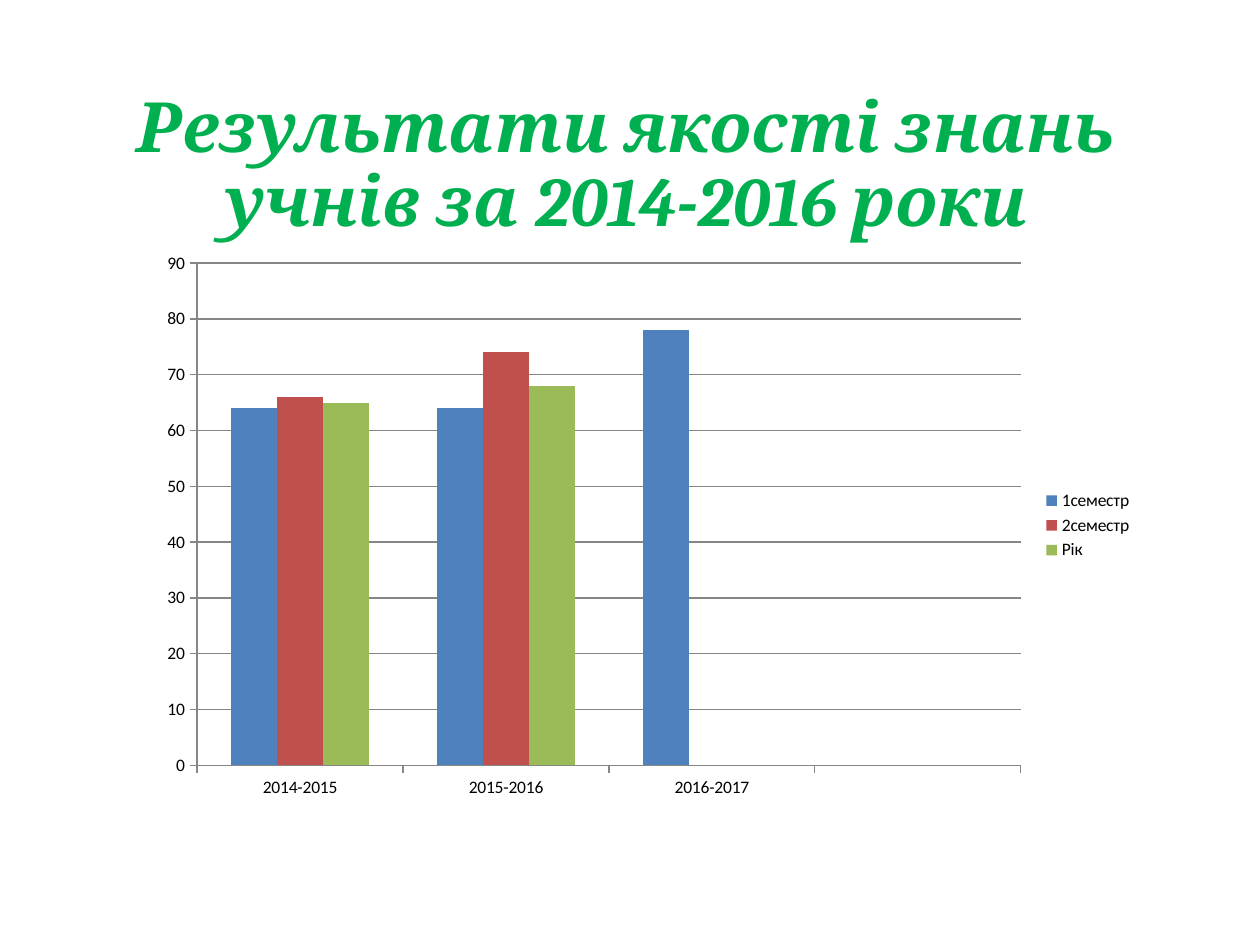
from dataclasses import dataclass

from pptx import Presentation
from pptx.chart.data import CategoryChartData
from pptx.dml.color import RGBColor
from pptx.enum.chart import XL_CHART_TYPE, XL_LEGEND_POSITION, XL_TICK_MARK
from pptx.enum.text import MSO_ANCHOR, PP_ALIGN
from pptx.util import Inches, Pt

COLUMNS = XL_CHART_TYPE.COLUMN_CLUSTERED
LEGEND_RIGHT = XL_LEGEND_POSITION.RIGHT
TICK_OUTSIDE = XL_TICK_MARK.OUTSIDE
MIDDLE = MSO_ANCHOR.MIDDLE
CENTER = PP_ALIGN.CENTER


@dataclass(frozen=True)
class Theme:
    title_font: str = "Cambria"
    chart_font: str = "Calibri"
    title_size: float = 39.6
    chart_size: float = 10
    title_color: str = "00B050"
    chart_text: str = "000000"
    lines: str = "868686"
    series: tuple = ("4F81BD", "C0504D", "9BBB59")


THEME = Theme()
TITLE = "Результати якості знань учнів за 2014-2016 роки"
# The last category is an empty slot on the axis.
YEARS = ("2014-2015", "2015-2016", "2016-2017", "")
RESULTS = {
    "1семестр": (64, 64, 78, None),
    "2семестр": (66, 74, None, None),
    "Рік": (65, 68, None, None),
}


def set_font(font, name, size, color, bold=False, italic=False):
    font.name = name
    font.size = Pt(size)
    font.bold = bold
    font.italic = italic
    font.color.rgb = RGBColor.from_string(color)


def add_text(slide, box, text, *, align, anchor, line_spacing, **font_format):
    frame = slide.shapes.add_textbox(*box).text_frame
    frame.word_wrap = True
    frame.vertical_anchor = anchor
    paragraph = frame.paragraphs[0]
    paragraph.alignment = align
    paragraph.line_spacing = line_spacing
    run = paragraph.add_run()
    run.text = text
    set_font(run.font, **font_format)


def add_title(slide, box):
    add_text(slide, box, TITLE, align=CENTER, anchor=MIDDLE, line_spacing=0.9,
             name=THEME.title_font, size=THEME.title_size,
             color=THEME.title_color, bold=True, italic=True)


def style_line(line):
    line.color.rgb = RGBColor.from_string(THEME.lines)
    line.width = Pt(0.75)


def add_results_chart(slide, box):
    data = CategoryChartData()
    data.categories = YEARS
    for name, values in RESULTS.items():
        data.add_series(name, values)

    chart = slide.shapes.add_chart(COLUMNS, *box, data).chart
    set_font(chart.font, THEME.chart_font, THEME.chart_size, THEME.chart_text)
    chart.has_title = False
    chart.has_legend = True
    chart.legend.position = LEGEND_RIGHT
    chart.legend.include_in_layout = False

    for axis in (chart.category_axis, chart.value_axis):
        axis.major_tick_mark = TICK_OUTSIDE
        style_line(axis.format.line)
    chart.value_axis.minimum_scale = 0
    chart.value_axis.maximum_scale = 90
    chart.value_axis.major_unit = 10
    chart.value_axis.has_major_gridlines = True
    style_line(chart.value_axis.major_gridlines.format.line)

    plot = chart.plots[0]
    plot.vary_by_categories = False
    plot.gap_width = 150
    for series, color in zip(plot.series, THEME.series):
        series.format.fill.solid()
        series.format.fill.fore_color.rgb = RGBColor.from_string(color)


def main():
    presentation = Presentation()
    presentation.slide_width = Inches(10)
    presentation.slide_height = Inches(7.5)
    slide = presentation.slides.add_slide(presentation.slide_layouts[6])
    add_title(slide, (Inches(0.47), Inches(0.7), Inches(9), Inches(1.25)))
    add_results_chart(slide, (Inches(1.17), Inches(1.92), Inches(7.92), Inches(4.5)))
    presentation.save("out.pptx")


if __name__ == "__main__":
    main()
